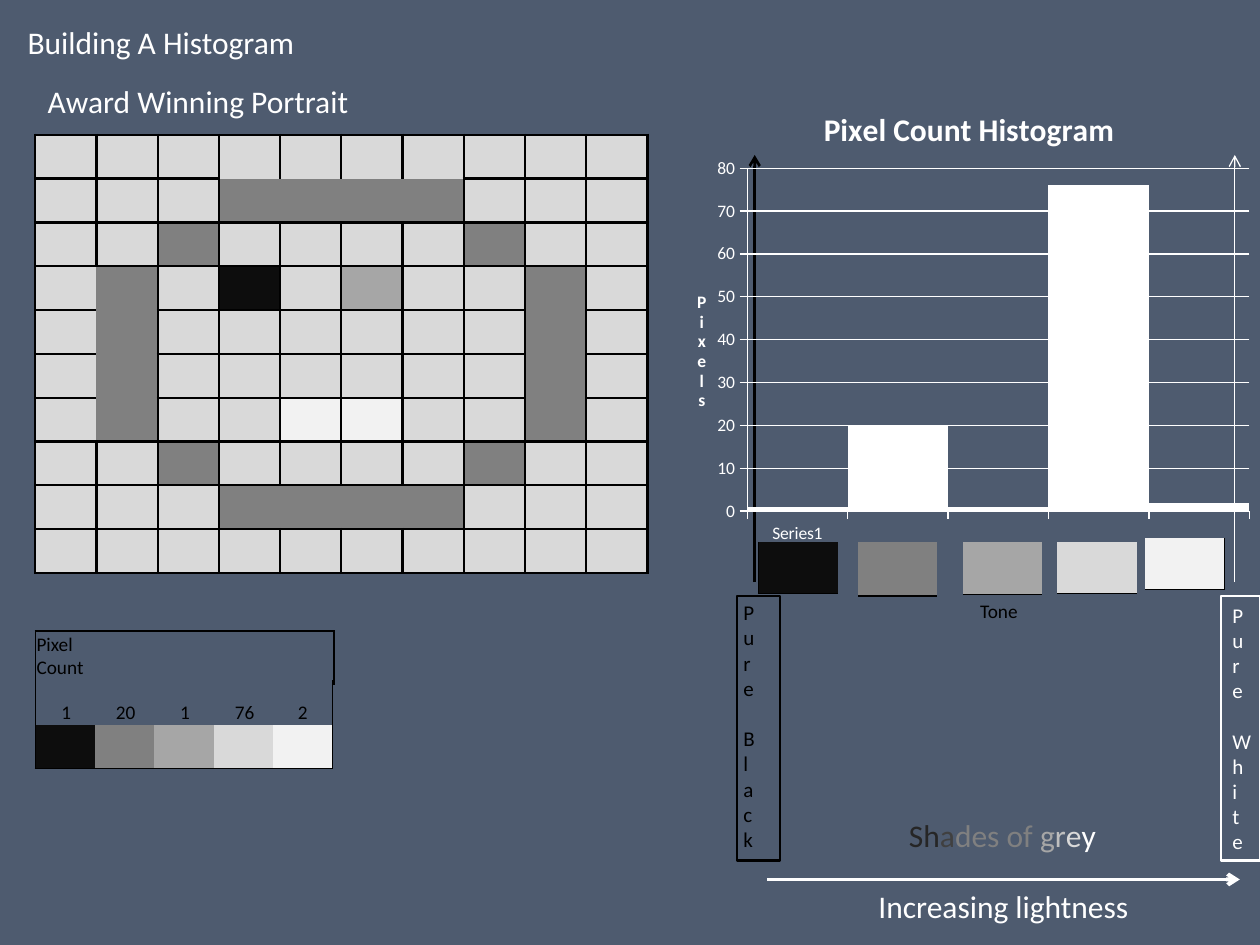
from lxml import etree
from pptx import Presentation
from pptx.chart.data import CategoryChartData
from pptx.dml.color import RGBColor
from pptx.enum.chart import XL_CHART_TYPE as CT, XL_TICK_MARK as TICK
from pptx.enum.shapes import MSO_CONNECTOR, MSO_SHAPE
from pptx.enum.text import MSO_ANCHOR, PP_ALIGN
from pptx.oxml import parse_xml
from pptx.oxml.ns import nsdecls, qn
from pptx.util import Inches, Pt

BLACK, WHITE = RGBColor(0, 0, 0), RGBColor(255, 255, 255)
BACKGROUND = RGBColor(0x4E, 0x5B, 0x6F)
TONES = {
    "K": RGBColor(0x0D, 0x0D, 0x0D),
    "G": RGBColor(0x80, 0x80, 0x80),
    "M": RGBColor(0xA6, 0xA6, 0xA6),
    ".": RGBColor(0xD9, 0xD9, 0xD9),
    "W": RGBColor(0xF2, 0xF2, 0xF2),
}
FONT = "Calibri"
NO_STYLE = "{2D5ABB26-0587-4C30-8999-92F81FD0307C}"

# Content
PORTRAIT = [
    "..........",
    "...GGGG...",
    "..G....G..",
    ".G.K.M..G.",
    ".G......G.",
    ".G......G.",
    ".G..WW..G.",
    "..G....G..",
    "...GGGG...",
    "..........",
]
COUNTS = [1, 20, 1, 76, 2]
# left, top, height, borders of the tone swatches under the chart
SWATCHES = [(6.02, 4.3, 0.41, "LB"), (6.81, 4.3, 0.43, "B"), (7.64, 4.3, 0.42, "B"),
            (8.39, 4.3, 0.41, "B"), (9.09, 4.27, 0.41, "RB")]
GREY_RUNS = [("Sh", 0x26), ("a", 0x40), ("des of ", 0x80), ("g", 0xA6),
             ("r", 0xBF), ("e", 0xD9), ("y", 0xFF)]
# box, size, alignment, side inset, runs
LEFT, CENTER = PP_ALIGN.LEFT, PP_ALIGN.CENTER
TEXTS = [
    ((0.28, 0.6, 5.04, 0.4), 18, LEFT, 0.1, [("Award Winning Portrait", WHITE)]),
    ((0.12, 0.13, 3.39, 0.4), 18, LEFT, 0.1, [("Building A Histogram", WHITE)]),
    ((5.85, 4.71, 0.16, 2.12), 12, LEFT, 0.05, [("Pure Black", BLACK)]),
    ((9.69, 4.73, 0.24, 2.12), 12, LEFT, 0.09, [("Pure White", WHITE)]),
    ((6.5, 6.43, 2.91, 0.4), 18, CENTER, 0.1,
     [(t, RGBColor(v, v, v)) for t, v in GREY_RUNS]),
    ((6.43, 6.99, 3.07, 0.4), 18, CENTER, 0.1, [("Increasing lightness", WHITE)]),
    ((7.68, 4.71, 0.55, 0.29), 11, LEFT, 0.1, [("Tone", BLACK)]),
]
ARROWS = [((5.99, 4.62), (5.99, 1.23), BLACK, 1.5),
          ((9.8, 4.62), (9.8, 1.23), WHITE, 0.75),
          ((6.09, 6.98), (9.84, 6.98), WHITE, 2.25)]
FRAMES = [((5.85, 4.73, 0.34, 2.1), BLACK), ((9.69, 4.73, 0.31, 2.1), WHITE)]

prs = Presentation()
prs.slide_width, prs.slide_height = Inches(10), Inches(7.5)
s = prs.slides.add_slide(prs.slide_layouts[6])
s.background.fill.solid()
s.background.fill.fore_color.rgb = BACKGROUND


def style(font, size, color, bold=False):
    for key, value in {"name": FONT, "size": Pt(size), "bold": bold}.items():
        setattr(font, key, value)
    font.color.rgb = color


def add_grid(x, y, cols, rows, cells, pt=1):
    """cells: rows of (tone or None, text, border sides, alignment)."""
    frame = s.shapes.add_table(len(rows), len(cols), Inches(x), Inches(y),
                               Inches(sum(cols)), Inches(sum(rows)))
    table = frame.table
    table.first_row = table.horz_banding = False
    frame._element.find(".//" + qn("a:tableStyleId")).text = NO_STYLE
    for col, w in zip(table.columns, cols):
        col.width = Inches(w)
    for row, h in zip(table.rows, rows):
        row.height = Inches(h)
    for r, line in enumerate(cells):
        for c, (tone, text, sides, align) in enumerate(line):
            cell = table.cell(r, c)
            margins = {"margin_left": 0.01, "margin_right": 0.01,
                       "margin_top": 0.01, "margin_bottom": 0}
            for key, value in margins.items():
                setattr(cell, key, Inches(value))
            cell.vertical_anchor = MSO_ANCHOR.BOTTOM
            if tone:
                cell.fill.solid()
                cell.fill.fore_color.rgb = TONES[tone]
            else:
                cell.fill.background()
            if text:
                p = cell.text_frame.paragraphs[0]
                p.alignment = align
                run = p.add_run()
                run.text = text
                style(run.font, 11, BLACK)
            tcPr = cell._tc.get_or_add_tcPr()
            for i, side in enumerate(k for k in "LRTB" if k in sides):
                tcPr.insert(i, parse_xml(
                    f'<a:ln{side} {nsdecls("a")} w="{Pt(pt)}"><a:solidFill>'
                    f'<a:srgbClr val="{BLACK}"/></a:solidFill></a:ln{side}>'))


def portrait_sides(r, c):
    """An edge is ruled when the cell to its right or below it is light."""
    def light(row, col):
        return row > 9 or col > 9 or PORTRAIT[row][col] in ".W"
    return ("LT" if light(r, c) else "") + "R" * light(r, c + 1) + "B" * light(r + 1, c)


# Portrait grid
add_grid(0.28, 1.07, [0.486] * 10, [0.348] * 10,
         [[(tone, "", portrait_sides(r, c), None) for c, tone in enumerate(line)]
          for r, line in enumerate(PORTRAIT)], 1.5)

# Pixel count key
add_grid(0.28, 5.01, [0.49], [0.38], [[(None, "Pixel Count", "LT", LEFT)]])
for i, (tone, count) in enumerate(zip(TONES, COUNTS)):
    side = {0: "L", 4: "R"}.get(i, "")
    add_grid(0.28 + 0.472 * i, 5.4, [0.47 if i == 4 else 0.49], [0.35, 0.35],
             [[(None, str(count), side, CENTER)], [(tone, "", side + "B", None)]])
add_grid(0.67, 5.01, [0.49, 0.49, 0.49, 0.51], [0.43],
         [[(None, "", "TR" if i == 3 else "T", None) for i in range(4)]])

# Tone swatches
for tone, (x, y, h, sides) in zip(TONES, SWATCHES):
    add_grid(x, y, [0.63], [h], [[(tone, "", sides, None)]])

# Frames and arrows
for box, color in FRAMES:
    sp = s.shapes.add_shape(MSO_SHAPE.RECTANGLE, *map(Inches, box))
    sp.shadow.inherit = False
    sp.fill.background()
    sp.line.color.rgb, sp.line.width = color, Pt(1.25)
for start, end, color, width in ARROWS:
    line = s.shapes.add_connector(MSO_CONNECTOR.STRAIGHT, *map(Inches, start + end))
    line.line.color.rgb, line.line.width = color, Pt(width)
    etree.SubElement(line.line._get_or_add_ln(), qn("a:tailEnd"), type="arrow")
    etree.SubElement(line._element.spPr, qn("a:effectLst"))


# Histogram
def place(element, x, y, w=None, h=None):
    """Give a chart part a fixed place, in fractions of the chart."""
    for old in element.findall(qn("c:layout")):
        element.remove(old)
    inner = '<c:layoutTarget val="inner"/>' if w else ""
    sizes = f'<c:w val="{w}"/><c:h val="{h}"/>' if w else ""
    layout = parse_xml(
        f'<c:layout {nsdecls("c")}><c:manualLayout>{inner}<c:xMode val="edge"/>'
        f'<c:yMode val="edge"/><c:x val="{x}"/><c:y val="{y}"/>{sizes}'
        '</c:manualLayout></c:layout>')
    text = element.find(qn("c:tx"))
    element.insert(0 if text is None else 1, layout)


data = CategoryChartData()
data.categories = ["Series1", "", "", "", ""]
data.add_series("Series 1", COUNTS)
chart = s.shapes.add_chart(CT.COLUMN_CLUSTERED, Inches(5.32), Inches(0.58),
                           Inches(4.69), Inches(3.78), data).chart
style(chart.font, 10, WHITE)
chart.has_legend = False
plot = chart.plots[0]
plot.gap_width, plot.vary_by_categories = 0, False
plot.series[0].format.fill.solid()
plot.series[0].format.fill.fore_color.rgb = WHITE
values = chart.value_axis
for key, value in {"minimum_scale": 0, "maximum_scale": 80, "major_unit": 10,
                   "has_major_gridlines": True}.items():
    setattr(values, key, value)
for axis in (values, chart.category_axis):
    axis.major_tick_mark = TICK.OUTSIDE
for part in (values, chart.category_axis, values.major_gridlines):
    part.format.line.color.rgb, part.format.line.width = WHITE, Pt(0.75)
for owner, text, size, x, y in [(chart, "Pixel Count Histogram", 18, 0.25, 0.06),
                                (values, "Pixels", 10, 0.04, 0.45)]:
    title = owner.chart_title if owner is chart else owner.axis_title
    title.text_frame.text = text
    style(title.text_frame.paragraphs[0].runs[0].font, size, WHITE, True)
    place(title._element, x, y)
body = values.axis_title._element.find(".//" + qn("a:bodyPr"))
body.set("rot", "0")
body.set("vert", "wordArtVert")
place(chart._chartSpace.chart.plotArea, 0.13, 0.2, 0.85, 0.72)

# Texts
for box, size, align, inset, runs in TEXTS:
    tf = s.shapes.add_textbox(*map(Inches, box)).text_frame
    tf.word_wrap = True
    tf.margin_left = tf.margin_right = Inches(inset)
    p = tf.paragraphs[0]
    p.alignment = align
    for text, color in runs:
        r = p.add_run()
        r.text = text
        style(r.font, size, color)

prs.save("out.pptx")
